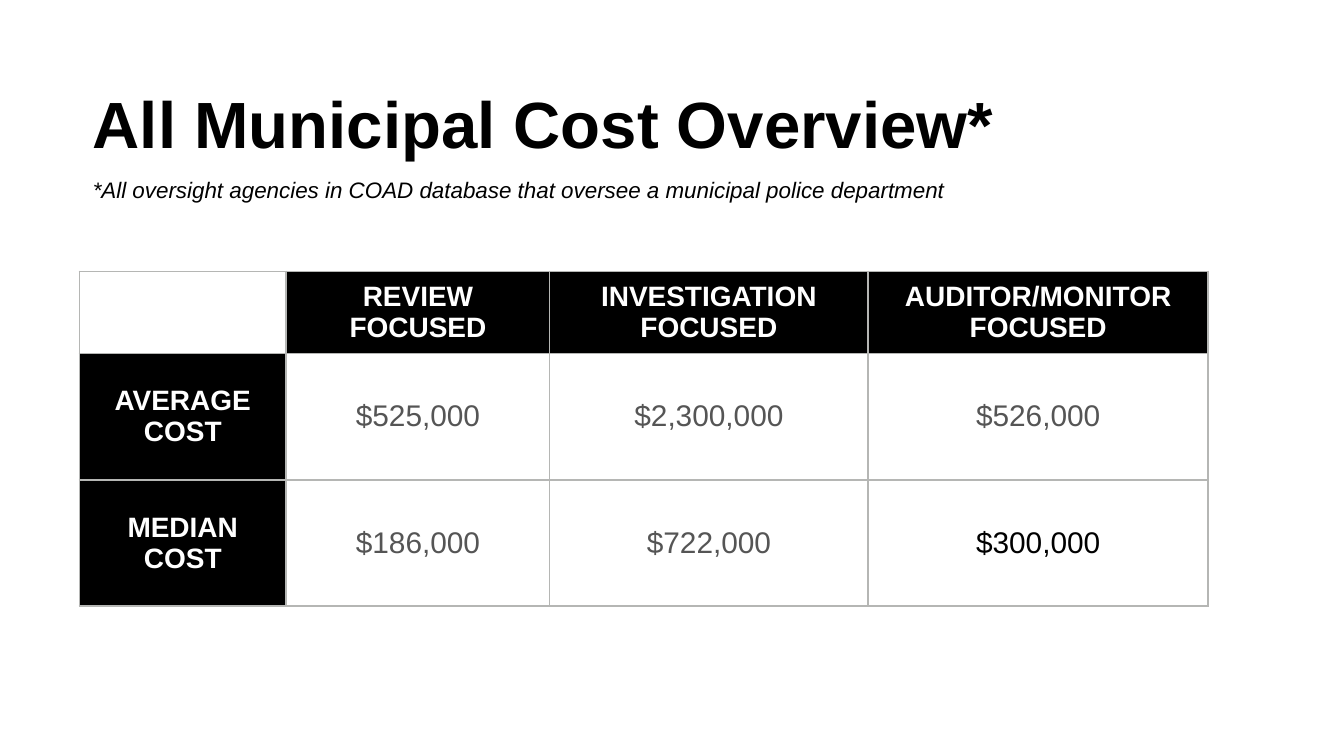
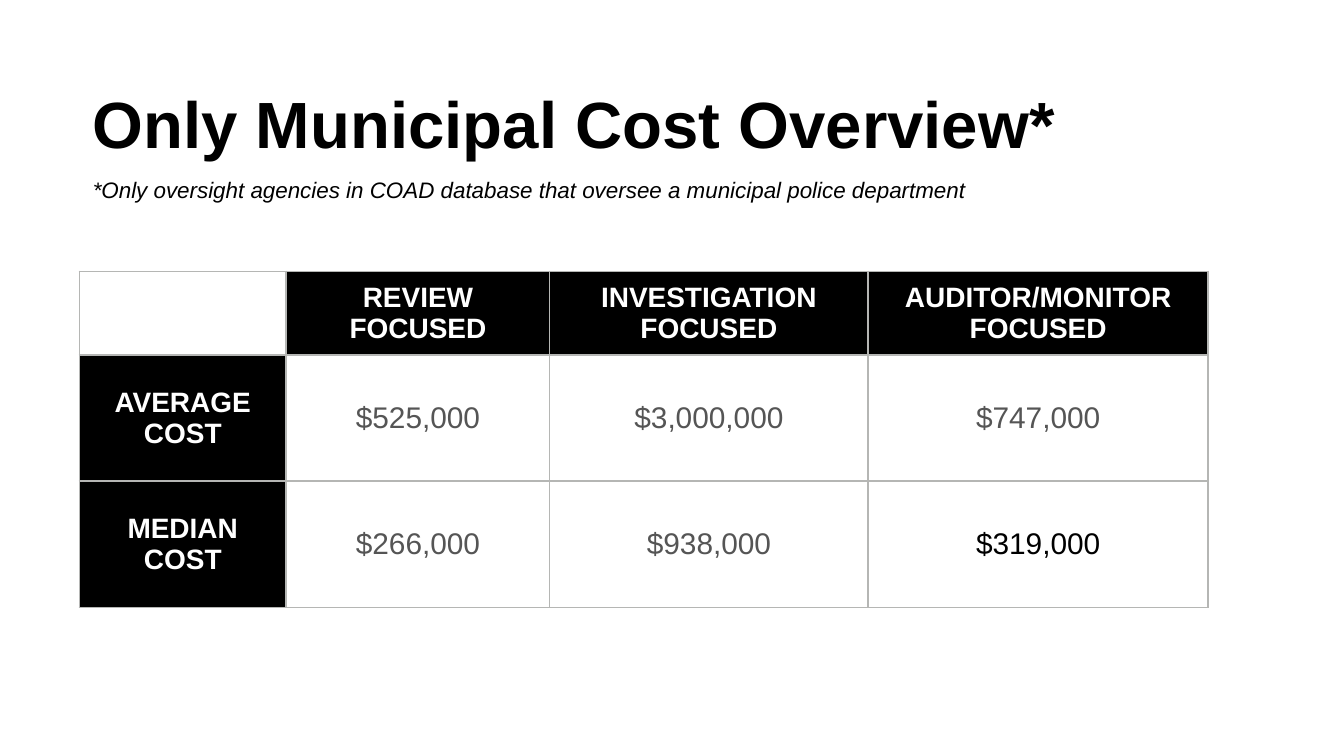
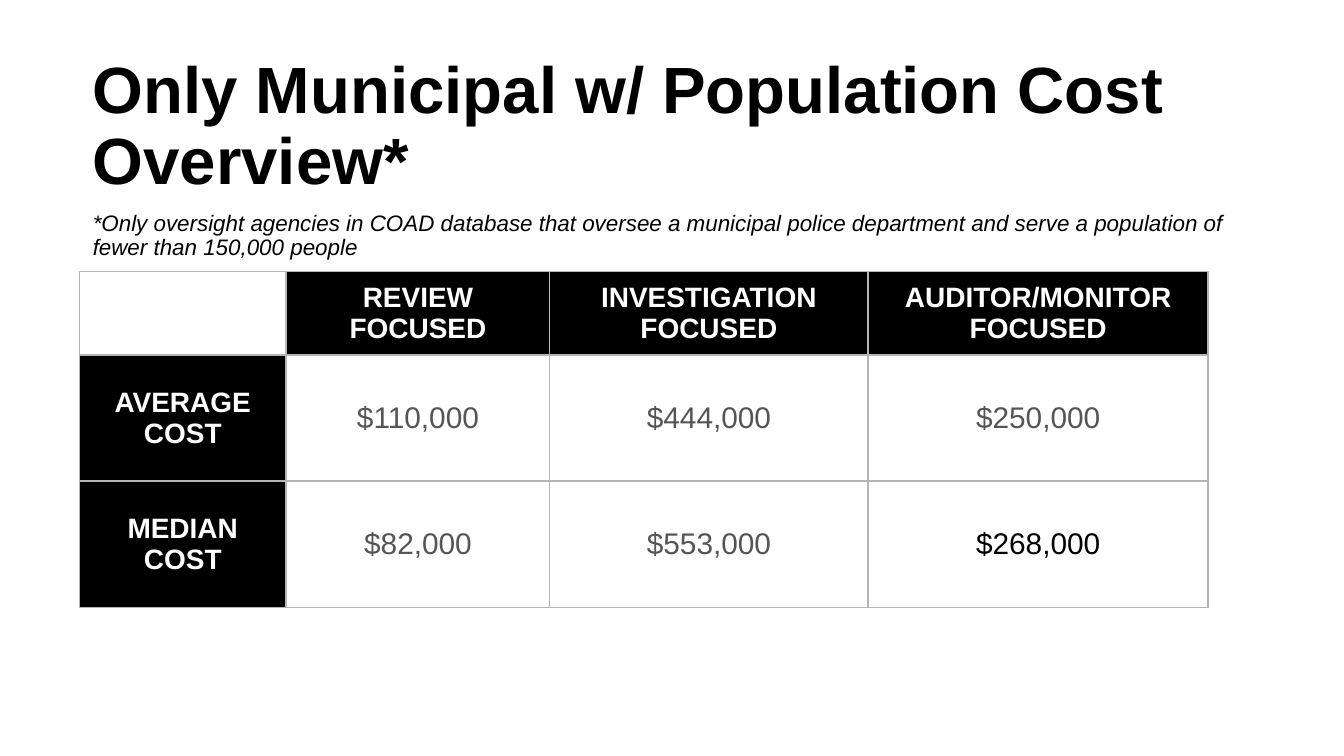
from copy import deepcopy
from lxml.etree import SubElement
from pptx import Presentation
from pptx.dml.color import RGBColor
from pptx.enum.text import MSO_ANCHOR, PP_ALIGN
from pptx.oxml.ns import qn
from pptx.util import Inches, Pt

# Shared style
FONT = "Arial"
HUES = {"black": "000000", "white": "FFFFFF", "gray": "555555", "line": "B5B6B4"}
COLS = [1.54, 1.96, 2.37, 2.53]
ROWS = [0.61, 0.94, 0.94]
HEADS = ["", "REVIEW\nFOCUSED", "INVESTIGATION\nFOCUSED", "AUDITOR/MONITOR\nFOCUSED"]

# Title, note, top of note, average costs, median costs
PAGES = [
    ("All Municipal Cost Overview*",
     "*All oversight agencies in COAD database that oversee a municipal police department",
     1.31,
     ["$525,000", "$2,300,000", "$526,000"],
     ["$186,000", "$722,000", "$300,000"]),
    ("Only Municipal Cost Overview*",
     "*Only oversight agencies in COAD database that oversee a municipal police department",
     1.31,
     ["$525,000", "$3,000,000", "$747,000"],
     ["$266,000", "$938,000", "$319,000"]),
    ("Only Municipal w/ Population Cost Overview*",
     "*Only oversight agencies in COAD database that oversee a municipal police department "
     "and serve a population of fewer than 150,000 people",
     1.56,
     ["$110,000", "$444,000", "$250,000"],
     ["$82,000", "$553,000", "$268,000"]),
]


def write(frame, text, size, hue="black", bold=False, slant=False,
          align=PP_ALIGN.LEFT, space=1.0):
    para = frame.paragraphs[0]
    para.text = text
    para.alignment = align
    para.line_spacing = space
    for run in para.runs:
        font = run.font
        font.name, font.size = FONT, Pt(size)
        font.bold, font.italic = bold, slant
        font.color.rgb = RGBColor.from_string(HUES[hue])
    # Line breaks take the size of the text around them
    for gap in para._p.findall(qn("a:br")):
        gap.append(deepcopy(para.runs[0]._r.rPr))


def frame_cell(cell, hue):
    props = cell._tc.get_or_add_tcPr()
    for side in ("a:lnL", "a:lnR", "a:lnT", "a:lnB"):
        line = SubElement(props, qn(side), w=str(Pt(1)))
        fill = SubElement(line, qn("a:solidFill"))
        SubElement(fill, qn("a:srgbClr"), val=HUES["line"])
    cell.fill.solid()
    cell.fill.fore_color.rgb = RGBColor.from_string(HUES[hue])


# Widescreen deck, 16 to 9
deck = Presentation()
deck.slide_width = Inches(10)
deck.slide_height = Inches(10 * 9 / 16)

for title, note, drop, means, mids in PAGES:
    slide = deck.slides.add_slide(deck.slide_layouts[6])

    # Cost table
    grid = slide.shapes.add_table(
        len(ROWS), len(COLS), Inches(0.59), Inches(2.02),
        Inches(sum(COLS)), Inches(sum(ROWS))).table
    for col, width in zip(grid.columns, COLS):
        col.width = Inches(width)
    for row, height in zip(grid.rows, ROWS):
        row.height = Inches(height)
    cells = [HEADS, ["AVERAGE\nCOST"] + means, ["MEDIAN\nCOST"] + mids]
    for r, texts in enumerate(cells):
        for c, text in enumerate(texts):
            cell = grid.cell(r, c)
            head = (r == 0) != (c == 0)
            frame_cell(cell, "black" if head else "white")
            if not text:
                continue
            cell.vertical_anchor = MSO_ANCHOR.MIDDLE
            cell.margin_left = cell.margin_right = Inches(0.22)
            cell.margin_top = cell.margin_bottom = Inches(0.06)
            last = (r, c) == (len(ROWS) - 1, len(COLS) - 1)
            hue = "white" if head else "black" if last else "gray"
            write(cell.text_frame, text, 15 if head else 16, hue=hue,
                  bold=head, align=PP_ALIGN.CENTER)

    # Title and note
    for text, top, high, anchor, size, bold in (
            (title, 0.67, 0.56, MSO_ANCHOR.MIDDLE, 35, True),
            (note, drop, 0.38, MSO_ANCHOR.TOP, 12, False)):
        box = slide.shapes.add_textbox(
            Inches(0.69), Inches(top), Inches(8.62), Inches(high))
        frame = box.text_frame
        frame.word_wrap = True
        frame.vertical_anchor = anchor
        frame.margin_left, frame.margin_right = 0, Inches(0.04)
        frame.margin_top = frame.margin_bottom = Inches(0.02)
        write(frame, text, size, bold=bold, slant=not bold, space=0.9)

deck.save("out.pptx")
